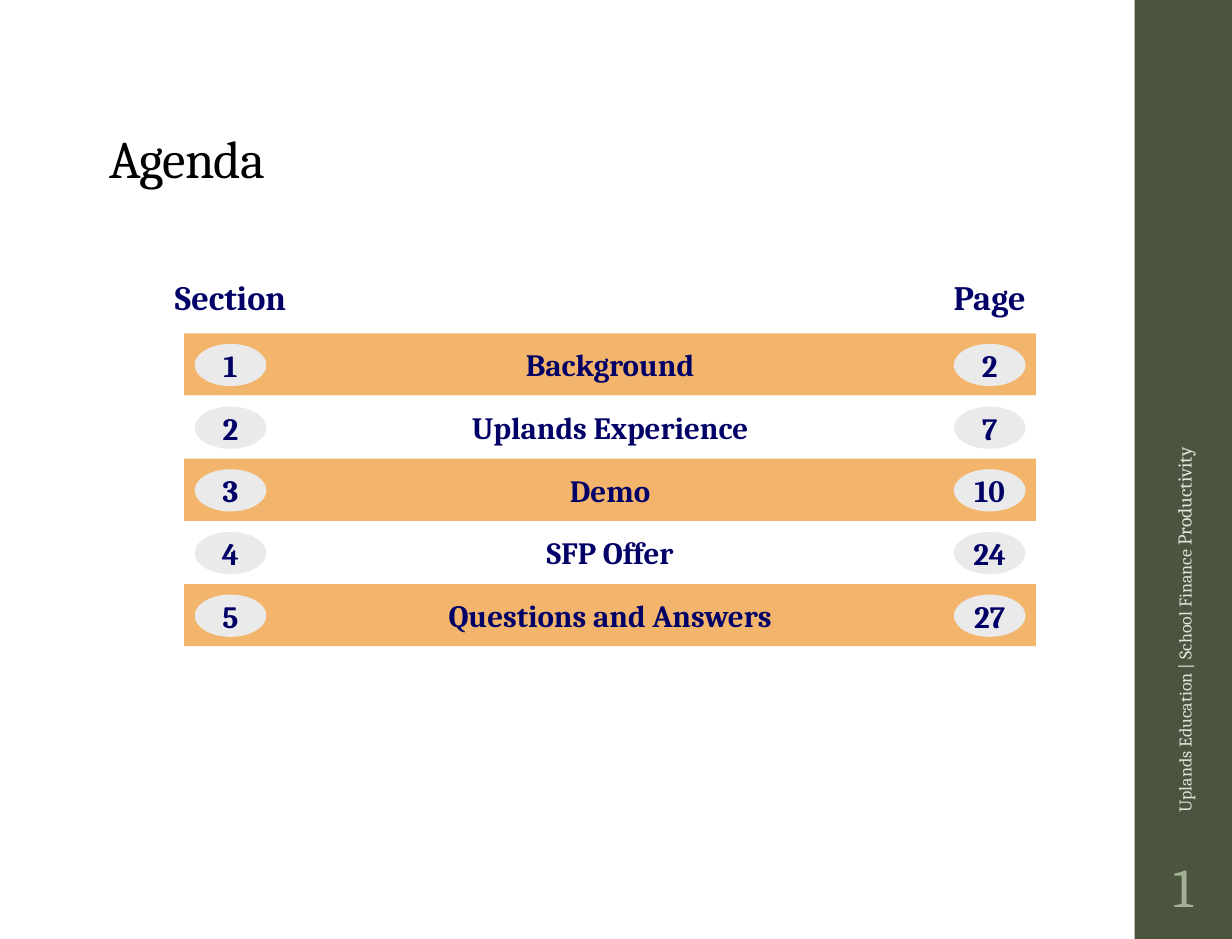
from pptx import Presentation
from pptx.dml.color import RGBColor
from pptx.enum.shapes import MSO_SHAPE
from pptx.enum.text import MSO_ANCHOR, MSO_AUTO_SIZE, PP_ALIGN
from pptx.util import Inches, Pt

TITLE = "Agenda"
HEADINGS = ("Section", "Page")
SECTIONS = [
    ("Background", 2),
    ("Uplands Experience", 7),
    ("Demo", 10),
    ("SFP Offer", 24),
    ("Questions and Answers", 27),
]
FOOTER = [("Uplands Education | School Finance ", 11), ("Productivity", 12)]
PAGE_NUMBER = "1"

FONT = "Cambria"
COLORS = {
    "sidebar": "4A543E", "title": "000000", "text": "000066",
    "odd": "F3B56C", "even": "FFFFFF", "badge": "EAEAEA",
    "footer": "E0E4DB", "number": "A2AF92",
}
WIDTH, HEIGHT = 10.5, 8
SIDEBAR_LEFT = 9.67
TABLE_LEFT, TABLE_TOP, TABLE_WIDTH = 1.57, 2.84, 7.26
ROW_PITCH, ROW_HEIGHT = 0.534, 0.53
BADGE_WIDTH, BADGE_HEIGHT, BADGE_MARGIN = 0.61, 0.36, 0.09
BADGE_LEFTS = (TABLE_LEFT + BADGE_MARGIN,
               TABLE_LEFT + TABLE_WIDTH - BADGE_MARGIN - BADGE_WIDTH)
HEADING_WIDTH, HEADING_HEIGHT, HEADING_TOP = 1.31, 0.44, 2.31


def color(name):
    return RGBColor.from_string(COLORS[name])


def style(para, size, color_name, align=PP_ALIGN.CENTER, bold=False):
    para.alignment = align
    para.font.name = FONT
    para.font.size = Pt(size)
    para.font.bold = bold
    para.font.color.rgb = color(color_name)


def write(shape, text, size, color_name="text", bold=True, inset=0.11):
    """Put one centred line of text in the middle of a shape."""
    frame = shape.text_frame
    frame.word_wrap = False
    frame.vertical_anchor = MSO_ANCHOR.MIDDLE
    frame.margin_left = frame.margin_right = Inches(inset)
    frame.text = str(text)
    style(frame.paragraphs[0], size, color_name, bold=bold)


def add_block(page, kind, box, fill):
    block = page.shapes.add_shape(kind, *map(Inches, box))
    block.shadow.inherit = False
    block.fill.solid()
    block.fill.fore_color.rgb = color(fill)
    block.line.fill.background()
    return block


def add_text_box(page, *box):
    return page.shapes.add_textbox(*map(Inches, box))


def add_title(page):
    title = page.shapes.title
    title.left, title.top, title.width, title.height = map(
        Inches, (0.83, 1.05, 8.92, 0.62))
    frame = title.text_frame
    frame.text = TITLE
    frame.auto_size = MSO_AUTO_SIZE.NONE
    frame.vertical_anchor = MSO_ANCHOR.BOTTOM
    para = frame.paragraphs[0]
    style(para, 32.4, "title", PP_ALIGN.LEFT)
    para.line_spacing = 0.9
    para.runs[0]._r.get_or_add_rPr().set("spc", "-50")


def add_sidebar(page):
    add_block(page, MSO_SHAPE.RECTANGLE,
              (SIDEBAR_LEFT, 0, WIDTH - SIDEBAR_LEFT, HEIGHT), "sidebar")
    footer = add_text_box(page, 8, 4.78, 4.18, 0.31)
    footer.rotation = 270
    frame = footer.text_frame
    frame.word_wrap = True
    frame.vertical_anchor = MSO_ANCHOR.MIDDLE
    para = frame.paragraphs[0]
    style(para, 11, "footer", PP_ALIGN.LEFT)
    for text, size in FOOTER:
        span = para.add_run()
        span.text = text
        span.font.size = Pt(size)
    number = add_text_box(page, 9.69, 7.2, 0.79, 0.69)
    write(number, PAGE_NUMBER, 33.6, "number", bold=False, inset=0.03)


def add_agenda(page):
    for heading, badge_left in zip(HEADINGS, BADGE_LEFTS):
        left = badge_left + (BADGE_WIDTH - HEADING_WIDTH) / 2
        box = add_text_box(page, left, HEADING_TOP, HEADING_WIDTH, HEADING_HEIGHT)
        write(box, heading, 21)
    for number, (name, start) in enumerate(SECTIONS, 1):
        top = TABLE_TOP + (number - 1) * ROW_PITCH
        band = add_block(page, MSO_SHAPE.RECTANGLE,
                         (TABLE_LEFT, top, TABLE_WIDTH, ROW_HEIGHT),
                         "odd" if number % 2 else "even")
        write(band, name, 19)
        for value, left in zip((number, start), BADGE_LEFTS):
            badge = add_block(page, MSO_SHAPE.OVAL,
                              (left, top + BADGE_MARGIN, BADGE_WIDTH, BADGE_HEIGHT),
                              "badge")
            write(badge, value, 19)


def main():
    deck = Presentation()
    deck.slide_width, deck.slide_height = Inches(WIDTH), Inches(HEIGHT)
    page = deck.slides.add_slide(deck.slide_layouts[5])
    add_title(page)
    add_sidebar(page)
    add_agenda(page)
    deck.save("out.pptx")


if __name__ == "__main__":
    main()
